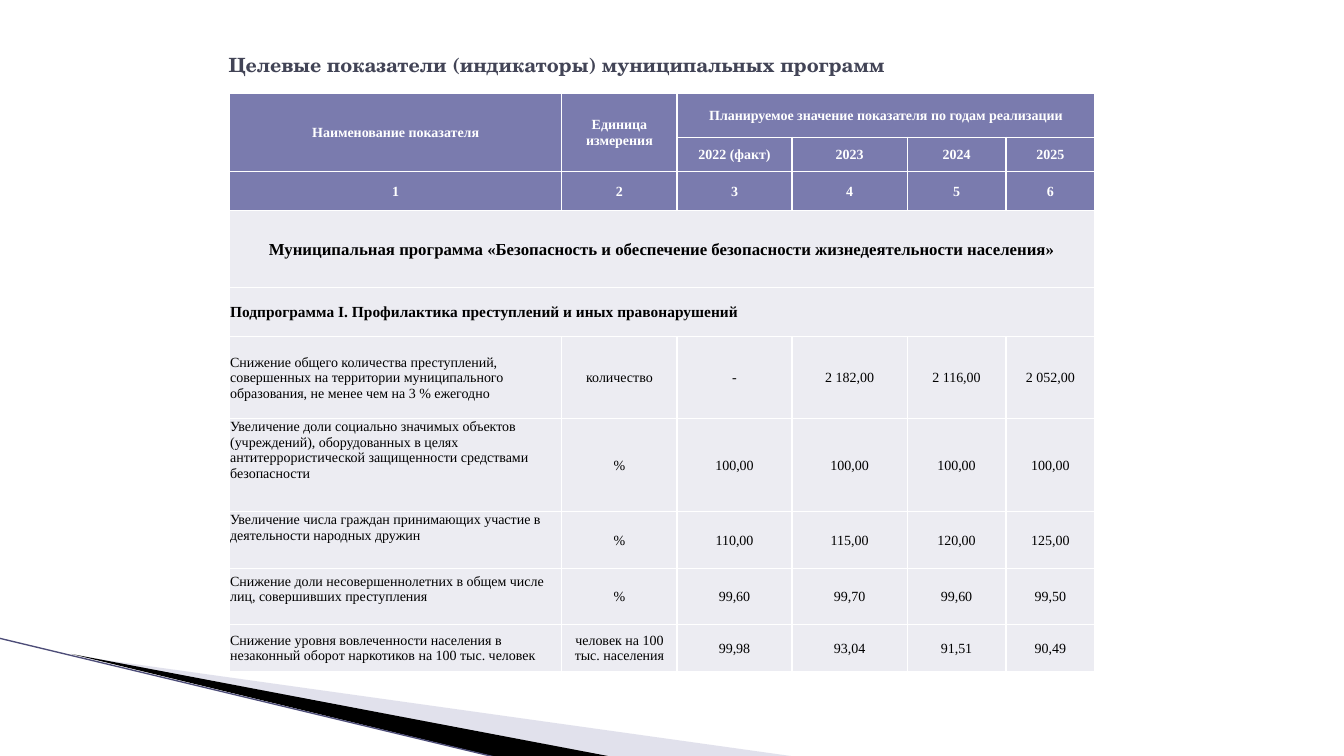
"""Build a slide with a table of target indicators for municipal programmes."""
from dataclasses import dataclass

from lxml.etree import SubElement
from pptx import Presentation
from pptx.dml.color import RGBColor as Rgb
from pptx.enum.shapes import MSO_CONNECTOR as Connector
from pptx.enum.text import MSO_ANCHOR as Anchor, PP_ALIGN as Align
from pptx.oxml.ns import qn
from pptx.util import Cm, Pt

COLORS = {
    "title": "424456", "header": "7A7BAE", "body": "ECECF2", "white": "FFFFFF",
    "black": "000000", "lilac": "B6B6D1", "edge": "4D4D78",
}
SERIF = "Times New Roman"
COLUMN_WIDTHS = (8.38, 2.9, 2.9, 2.9, 2.49, 2.24)
HEADER_ROWS = 3
MERGES = ((0, 0, 1, 0), (0, 1, 1, 1), (0, 2, 0, 5), (3, 0, 3, 5), (4, 0, 4, 5))


@dataclass
class Wedge:
    points: tuple
    color: str
    opacity: int = 100


@dataclass
class TableRow:
    height: float
    texts: tuple
    size: int = 10
    bold: bool = False
    name_align: Align = Align.LEFT
    name_anchor: Anchor = Anchor.MIDDLE
    name_top: float = 0.02


WEDGES = (
    Wedge(((1.85, 16.52), (20.14, 19.08), (15.44, 19.08)), "lilac", 40),
    Wedge(((1.8, 16.48), (15.47, 19.08), (12.6, 19.1)), "black"),
)

ROWS = (
    TableRow(1.11, ("Наименование показателя", "Единица измерения",
                    "Планируемое значение показателя по годам реализации"),
             bold=True, name_align=Align.CENTER),
    TableRow(0.83, ("", "", "2022 (факт)", "2023", "2024", "2025"),
             bold=True, name_align=Align.CENTER),
    TableRow(0.98, ("1", "2", "3", "4", "5", "6"), bold=True, name_align=Align.CENTER),
    TableRow(1.94, ("Муниципальная программа «Безопасность и обеспечение безопасности "
                    "жизнедеятельности населения»",),
             size=12, bold=True, name_align=Align.CENTER),
    TableRow(1.23, ("Подпрограмма I. Профилактика преступлений и иных правонарушений",),
             size=11, bold=True),
    TableRow(2.07, ("Снижение общего количества преступлений, совершенных на территории "
                    "муниципального образования, не менее чем на 3 % ежегодно",
                    "количество", "-", "2 182,00", "2 116,00", "2 052,00")),
    TableRow(2.34, ("Увеличение доли социально значимых объектов (учреждений), "
                    "оборудованных в целях антитеррористической защищенности "
                    "средствами безопасности",
                    "%", "100,00", "100,00", "100,00", "100,00"), name_anchor=Anchor.TOP),
    TableRow(1.44, ("Увеличение числа граждан принимающих участие в деятельности "
                    "народных дружин",
                    "%", "110,00", "115,00", "120,00", "125,00"), name_anchor=Anchor.TOP),
    TableRow(1.41, ("Снижение доли несовершеннолетних в общем числе лиц, "
                    "совершивших преступления",
                    "%", "99,60", "99,70", "99,60", "99,50"),
             name_anchor=Anchor.TOP, name_top=0.13),
    TableRow(1.18, ("Снижение уровня вовлеченности населения в незаконный оборот "
                    "наркотиков на 100 тыс. человек",
                    "человек на 100 тыс. населения", "99,98", "93,04", "91,51", "90,49")),
)


def set_all(target, values: dict) -> None:
    for name, value in values.items():
        setattr(target, name, value)


def rgb(name: str) -> Rgb:
    return Rgb.from_string(COLORS[name])


def write(frame, text: str, align: Align, color: str, font: dict) -> None:
    para = frame.paragraphs[0]
    para.alignment = align
    span = para.add_run()
    span.text = text
    set_all(span.font, font)
    span.font.color.rgb = rgb(color)


def draw_wedge(page, wedge: Wedge) -> None:
    start, *rest = [(Cm(x), Cm(y)) for x, y in wedge.points]
    builder = page.shapes.build_freeform(*start)
    builder.add_line_segments(rest, close=True)
    shape = builder.convert_to_shape()
    shape.shadow.inherit = False
    shape.line.fill.background()
    shape.fill.solid()
    shape.fill.fore_color.rgb = rgb(wedge.color)
    if wedge.opacity < 100:
        color = next(shape.element.spPr.iter(qn("a:srgbClr")))
        SubElement(color, qn("a:alpha"), val=str(wedge.opacity * 1000))


def draw_edge(page) -> None:
    edge = page.shapes.add_connector(
        Connector.STRAIGHT, Cm(-0.03), Cm(16.08), Cm(12.57), Cm(19.1))
    edge.line.color.rgb = rgb("edge")
    edge.line.width = Pt(0.95)
    SubElement(edge.element.spPr, qn("a:effectLst"))


def draw_title(page) -> None:
    box = page.shapes.add_textbox(Cm(5.51), Cm(0.76), Cm(22.86), Cm(1.75))
    set_all(box.text_frame, {"word_wrap": True, "vertical_anchor": Anchor.MIDDLE})
    write(box.text_frame, "Целевые показатели (индикаторы) муниципальных программ",
          Align.LEFT, "title", {"name": "TeX Gyre Schola", "size": Pt(14), "bold": True})


def style_cell(cell, fill: str) -> None:
    properties = cell._tc.get_or_add_tcPr()
    for side in ("lnL", "lnR", "lnT", "lnB"):
        border = SubElement(properties, qn(f"a:{side}"), w=str(Pt(1)))
        SubElement(SubElement(border, qn("a:solidFill")), qn("a:srgbClr"),
                   val=COLORS["white"])
    cell.fill.solid()
    cell.fill.fore_color.rgb = rgb(fill)
    set_all(cell, {"margin_left": Cm(0.02), "margin_right": Cm(0.02),
                   "margin_top": Cm(0.02), "margin_bottom": 0,
                   "vertical_anchor": Anchor.MIDDLE})


def draw_table(page) -> None:
    frame = page.shapes.add_table(
        len(ROWS), len(COLUMN_WIDTHS), Cm(5.78), Cm(2.35),
        Cm(sum(COLUMN_WIDTHS)), Cm(sum(row.height for row in ROWS)))
    table = frame.table
    for column, width in zip(table.columns, COLUMN_WIDTHS):
        column.width = Cm(width)
    for index, row in enumerate(ROWS):
        table.rows[index].height = Cm(row.height)
        is_header = index < HEADER_ROWS
        for cell in table.rows[index].cells:
            style_cell(cell, "header" if is_header else "body")
        font = {"name": SERIF, "size": Pt(row.size), "bold": row.bold}
        for column, text in enumerate(row.texts):
            if text:
                align = Align.CENTER if column else row.name_align
                write(table.cell(index, column).text_frame, text, align,
                      "white" if is_header else "black", font)
        set_all(table.cell(index, 0), {"vertical_anchor": row.name_anchor,
                                       "margin_top": Cm(row.name_top)})
    for top, left, bottom, right in MERGES:
        table.cell(top, left).merge(table.cell(bottom, right))


def main() -> None:
    deck = Presentation()
    set_all(deck, {"slide_width": Cm(33.87), "slide_height": Cm(19.05)})
    page = deck.slides.add_slide(deck.slide_layouts[6])
    for wedge in WEDGES:
        draw_wedge(page, wedge)
    draw_edge(page)
    draw_title(page)
    draw_table(page)
    deck.save("out.pptx")


if __name__ == "__main__":
    main()
